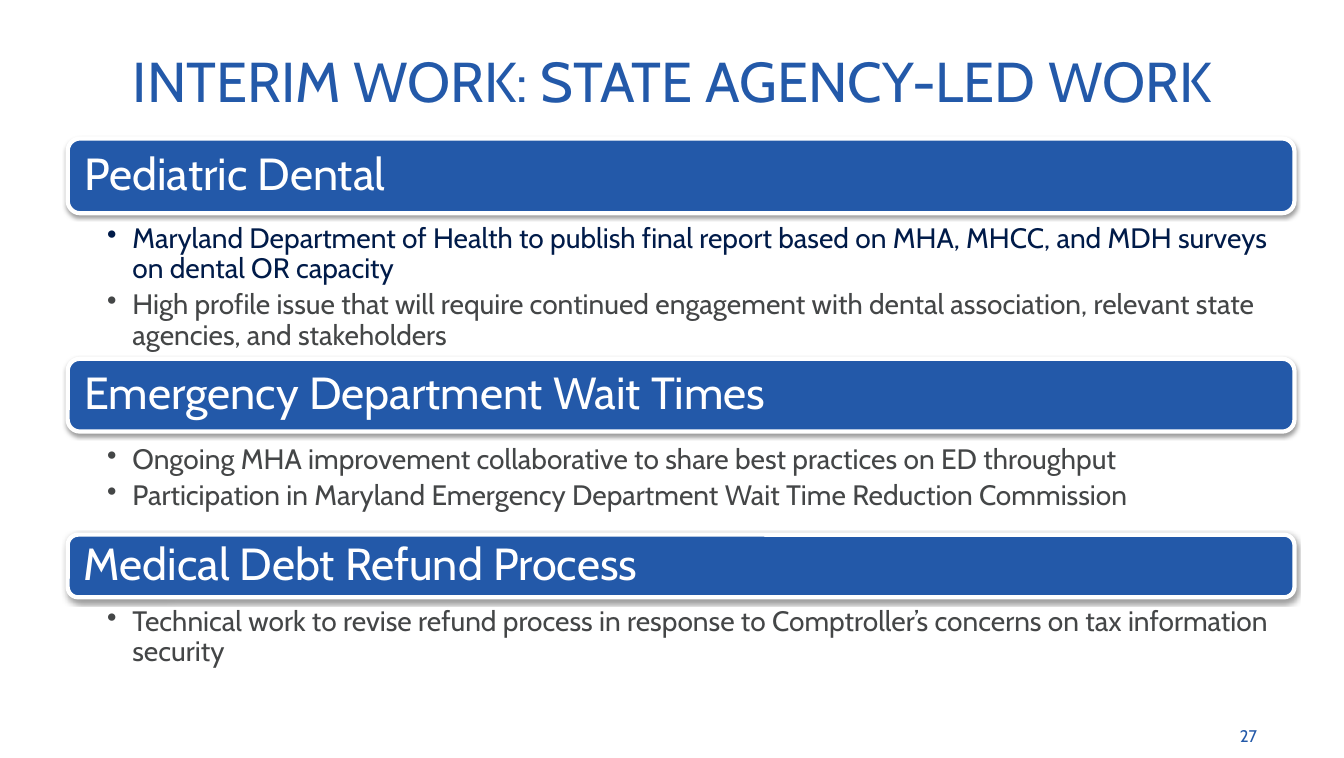
from lxml.etree import SubElement
from pptx import Presentation
from pptx.dml.color import RGBColor
from pptx.enum.shapes import MSO_SHAPE
from pptx.enum.text import MSO_ANCHOR, PP_ALIGN
from pptx.oxml.ns import qn
from pptx.util import Inches, Pt

BLUE = RGBColor(0x23, 0x59, 0xA9)
NAVY = RGBColor(0x00, 0x1B, 0x49)
GREY = RGBColor(0x44, 0x46, 0x47)
WHITE = RGBColor(0xFF, 0xFF, 0xFF)

LEFT, WIDTH = 0.67, 12.14

TOPICS = [
    ("Pediatric Dental", 1.37, 0.74, 2.19, 1.35, [
        ("Maryland Department of Health to publish final report based on MHA, MHCC, "
         "and MDH surveys on dental OR capacity", NAVY),
        ("High profile issue that will require continued engagement with dental "
         "association, relevant state agencies, and stakeholders", GREY),
    ]),
    ("Emergency Department Wait Times", 3.55, 0.72, 4.38, 1.14, [
        ("Ongoing MHA improvement collaborative to share best practices on ED throughput", GREY),
        ("Participation in Maryland Emergency Department Wait Time Reduction Commission", GREY),
    ]),
    ("Medical Debt Refund Process", 5.29, 0.62, 5.98, 1.14, [
        ("Technical work to revise refund process in response to Comptroller’s concerns "
         "on tax information security", GREY),
    ]),
]


def apply(target, values):
    for name, value in values.items():
        setattr(target, name, value)


class Deck:
    face = "Cabin"

    def __init__(self, width, height):
        self.show = Presentation()
        apply(self.show, {"slide_width": Inches(width), "slide_height": Inches(height)})
        self.slide = self.show.slides.add_slide(self.show.slide_layouts[6])

    def letter(self, para, text, size, color, **format):
        run = para.add_run()
        run.text = text
        apply(para, format)
        apply(run.font, {"name": self.face, "size": Pt(size)})
        run.font.color.rgb = color

    def label(self, box, text, size, align):
        shape = self.slide.shapes.add_textbox(*map(Inches, box))
        frame = shape.text_frame
        apply(frame, {"word_wrap": True, "vertical_anchor": MSO_ANCHOR.MIDDLE})
        self.letter(frame.paragraphs[0], text, size, BLUE, alignment=align)

    def shade(self, shape):
        shape.shadow.inherit = False
        effects = shape._element.spPr.find(qn("a:effectLst"))
        shadow = SubElement(effects, qn("a:outerShdw"), blurRad="40000",
                            dist="20000", dir="5400000", rotWithShape="0")
        color = SubElement(shadow, qn("a:srgbClr"), val="000000")
        SubElement(color, qn("a:alpha"), val="38000")

    def banner(self, box, text):
        shape = self.slide.shapes.add_shape(MSO_SHAPE.ROUNDED_RECTANGLE, *map(Inches, box))
        shape.fill.solid()
        shape.fill.fore_color.rgb = BLUE
        shape.line.color.rgb = WHITE
        shape.line.width = Pt(3)
        self.shade(shape)
        frame = shape.text_frame
        apply(frame, {"word_wrap": True, "vertical_anchor": MSO_ANCHOR.MIDDLE,
                      "margin_left": Inches(0.13), "margin_right": Inches(0.13),
                      "margin_top": 0, "margin_bottom": 0})
        self.letter(frame.paragraphs[0], text, 32, WHITE,
                    alignment=PP_ALIGN.LEFT, line_spacing=0.9)

    def bullets(self, box, items):
        frame = self.slide.shapes.add_textbox(*map(Inches, box)).text_frame
        apply(frame, {"word_wrap": True,
                      "margin_left": Inches(0.39), "margin_right": Inches(0.16),
                      "margin_top": Inches(0.03), "margin_bottom": Inches(0.03)})
        for index, (text, color) in enumerate(items):
            para = frame.add_paragraph() if index else frame.paragraphs[0]
            props = para._p.get_or_add_pPr()
            props.set("marL", str(Inches(0.25)))
            props.set("indent", str(-Inches(0.25)))
            SubElement(props, qn("a:buChar"), char="•")
            self.letter(para, text, 20, color, line_spacing=0.9, space_after=Pt(4))


def main():
    deck = Deck(13.3, 7.5)
    deck.label((LEFT, 0.17, 11.97, 1.25), "INTERIM WORK: STATE AGENCY-LED WORK",
               40, PP_ALIGN.CENTER)
    deck.label((11.88, 7.08, 0.66, 0.4), "27", 12, PP_ALIGN.RIGHT)
    for title, top, height, start, depth, items in TOPICS:
        deck.banner((LEFT, top, WIDTH, height), title)
        deck.bullets((LEFT, start, WIDTH, depth), items)
    deck.show.save("out.pptx")


if __name__ == "__main__":
    main()
